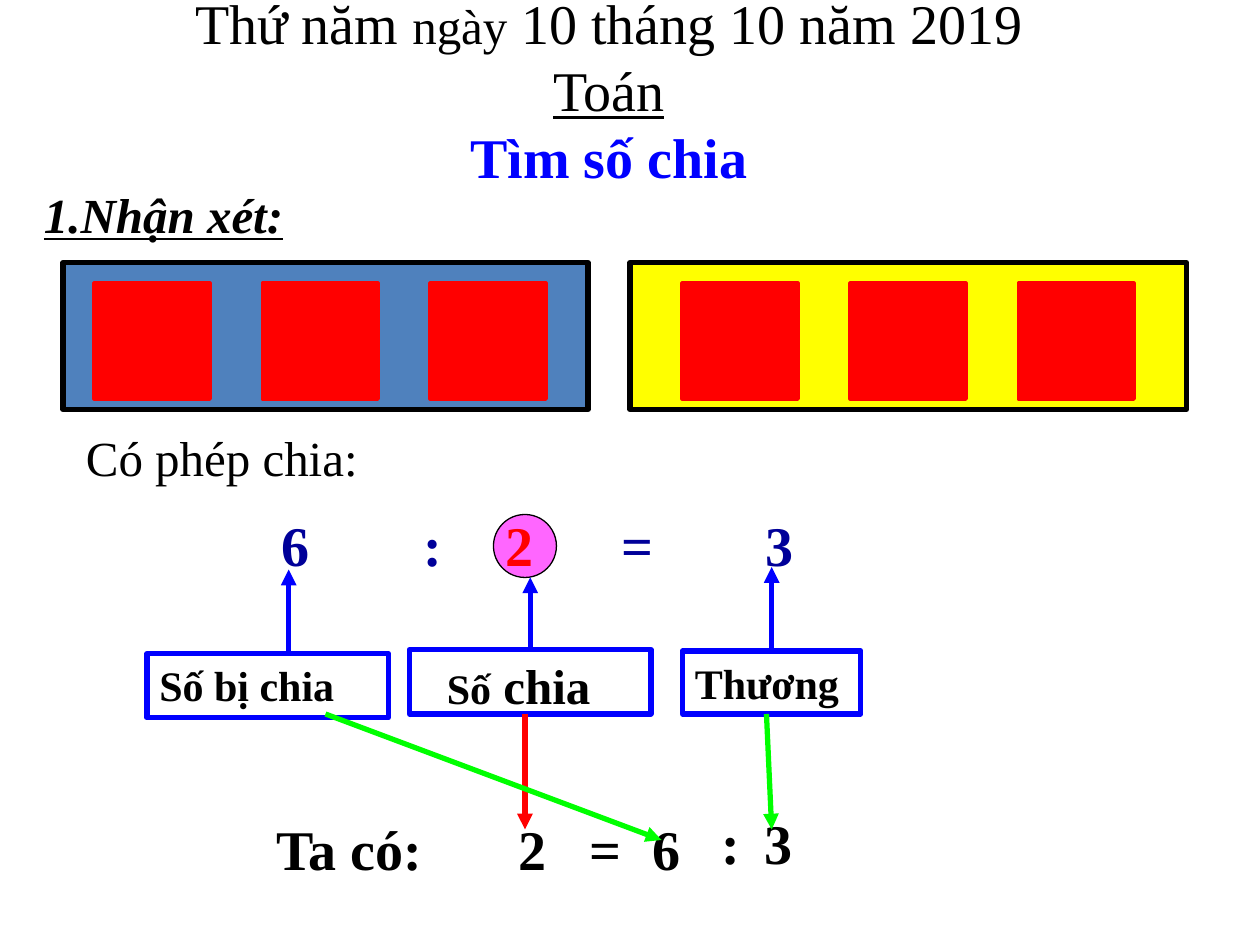
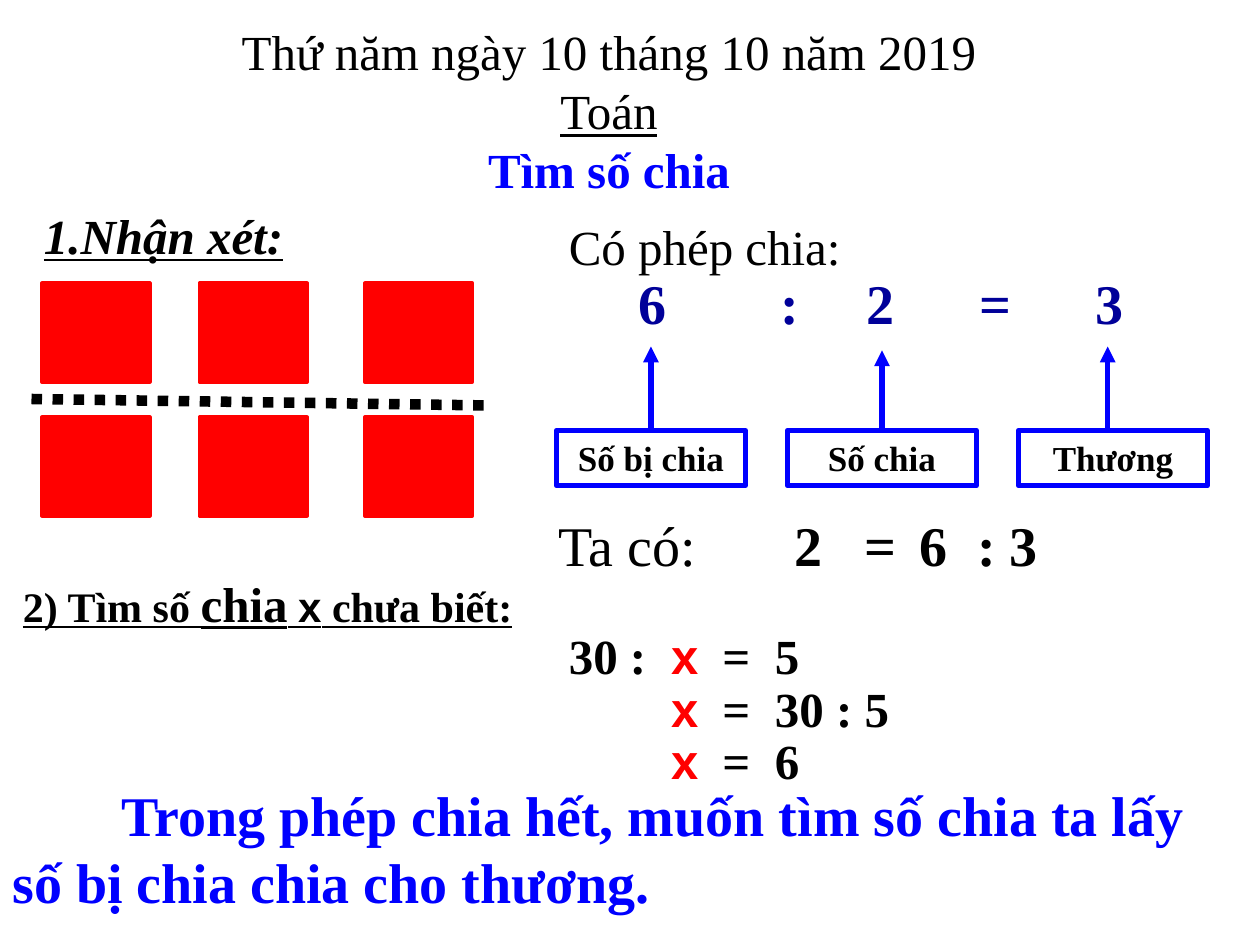
"""Build two lesson slides on finding the divisor."""
import lxml.etree
import pptx
import pptx.dml.color
import pptx.enum.dml
import pptx.enum.shapes
import pptx.enum.text
import pptx.oxml.ns
import pptx.util

PX = 9525
RGB = pptx.dml.color.RGBColor
BLACK, WHITE = RGB(0, 0, 0), RGB(255, 255, 255)
BLUE, NAVY, STEEL = RGB(0, 0, 255), RGB(0, 0, 0x99), RGB(0x4F, 0x81, 0xBD)
RED, LIME, YELLOW = RGB(255, 0, 0), RGB(0, 255, 0), RGB(255, 255, 0)
PINK = RGB(255, 0x66, 255)
SHAPE = pptx.enum.shapes.MSO_SHAPE
ALIGN = pptx.enum.text.PP_ALIGN
ANCHOR = pptx.enum.text.MSO_ANCHOR


def style(size, color=BLACK, name="Times New Roman", **more):
    return dict(size=pptx.util.Pt(size), color=color, name=name, **more)


def bold(size, color=BLACK, **more):
    return style(size, color, bold=True, **more)


HEAD = [("1.Nhận xét:", bold(28, italic=True, underline=True))]
CASE = [("Có phép chia:", style(28))]
UNDER = bold(24, underline=True)
EQUAL = bold(28)
VAR = bold(28, RED, name="Arial")


def title(size, date):
    return [date, [("Toán", style(size, underline=True))],
            [("Tìm số chia", bold(size, BLUE))]]


FIRST = {
    "title": ((32, 8, 864, 120), title(32, [
        ("Thứ năm ", style(32)), ("ngày", style(28)),
        (" 10 tháng 10 năm 2019", style(32))])),
    "shapes": [
        (SHAPE.OVAL, (376, 392, 48, 48), PINK, BLACK, 0.75),
        (SHAPE.RECTANGLE, (48, 200, 400, 112), STEEL, BLACK, 3),
        (SHAPE.RECTANGLE, (480, 200, 424, 112), YELLOW, BLACK, 3)],
    "cells": [(left + 128 * col, 216, 88, 88)
              for left in (72, 520) for col in range(3)],
    "labels": [
        ((112, 498, 184, 49), ALIGN.LEFT, [("Số bị chia", bold(24))], ()),
        ((520, 496, 136, 48), ALIGN.LEFT, [("Thương", bold(24))], ()),
        ((312, 495, 184, 49), ALIGN.LEFT,
         [("\tSố", bold(24)), (" chia", bold(28))], (19,))],
    "texts": [
        ((184, 384, 496, 61), [("\t6\t:\t=\t3", bold(32, NAVY))],
         (21, 129, 280, 390)),
        ((56, 321, 228, 55), CASE, ()),
        ((201, 616, 288, 61), [("Ta có:\t2\t=", bold(32))], (185, 239)),
        ((376, 384, 48, 60), [("2", bold(32, RED))], ()),
        ((24, 136, 400, 55), HEAD, ()),
        ((488, 616, 48, 61), [("6", bold(32))], ()),
        ((540, 611, 32, 61), [(":", bold(32))], ()),
        ((573, 611, 48, 61), [("3", bold(32))], ())],
    "lines": [
        ((220, 498, 220, 434), BLUE), ((588, 496, 588, 432), BLUE),
        ((404, 495, 404, 440), BLUE), ((400, 544, 400, 632), RED),
        ((584, 544, 588, 632), LIME), ((248, 544, 504, 640), LIME)],
    "dots": []}

SECOND = {
    "title": ((32, 24, 864, 120), title(28, [
        ("Thứ năm ngày 10 tháng 10 năm 2019", style(28))])),
    "shapes": [],
    "cells": [(left, top, 82, 75)
              for top in (216, 318) for left in (32, 152, 278)],
    "labels": [((left, 328, 144, 42), ALIGN.CENTER, [(word, bold(20))], ())
               for left, word in ((424, "Số bị chia"), (600, "Số chia"),
                                  (776, "Thương"))],
    "texts": [
        ((456, 200, 464, 61), [("\t6\t:\t2\t=\t3", bold(32, NAVY))],
         (21, 129, 195, 281, 369)),
        ((24, 152, 248, 55), HEAD, ()),
        ((424, 160, 227, 55), CASE, ()),
        ((416, 384, 401, 60),
         [("Ta có:", style(32)), ("\t2\t=\t6\t: 3", bold(32))],
         (180, 233, 275, 319)),
        ((8, 432, 464, 55),
         [("2) Tìm số ", UNDER), ("chia", bold(28, underline=True)),
          (" ", UNDER), ("x", {**UNDER, "name": "Arial"}),
          (" chưa biết:", UNDER)], ()),
        ((0, 590, 960, 113),
         [("\tTrong phép chia hết, muốn tìm số chia ta lấy "
           "số bị chia chia cho thương.", bold(32, BLUE))], (83,))] + [
        ((424, 472 + 40 * row, 280, 55),
         [(left + "\t", EQUAL), ("x", VAR), ("\t=\t" + right, EQUAL)],
         (78, 117, 157))
        for row, (left, right) in enumerate(
            (("30 :", "5"), ("", "30 : 5"), ("", "6")))],
    "lines": [((496, 328, 496, 264), BLUE), ((844, 328, 844, 264), BLUE),
              ((672, 328, 672, 267), BLUE)],
    "dots": [(24, 304, 376, 309)]}


def scale(box):
    return [n * PX for n in box]


def write(frame, paras, align=ALIGN.LEFT, tabs=(), anchor=ANCHOR.TOP):
    values = dict(word_wrap=True, vertical_anchor=anchor,
                  auto_size=pptx.enum.text.MSO_AUTO_SIZE.NONE)
    for key, value in values.items():
        setattr(frame, key, value)
    for num, runs in enumerate(paras):
        para = frame.add_paragraph() if num else frame.paragraphs[0]
        para.alignment = align
        if tabs:
            stops = lxml.etree.SubElement(para._p.get_or_add_pPr(),
                                          pptx.oxml.ns.qn("a:tabLst"))
            for stop in tabs:
                lxml.etree.SubElement(stops, pptx.oxml.ns.qn("a:tab"),
                                      pos=str(stop * PX), algn="l")
        for text, form in runs:
            run = para.add_run()
            run.text = text
            for key, value in form.items():
                if key == "color":
                    run.font.color.rgb = value
                else:
                    setattr(run.font, key, value)


def block(slide, kind, box, fill, color, width):
    shape = slide.shapes.add_shape(kind, *scale(box))
    shape.shadow.inherit = False
    if fill is None:
        shape.fill.background()
    else:
        shape.fill.solid()
        shape.fill.fore_color.rgb = fill
    shape.line.color.rgb = color
    shape.line.width = pptx.util.Pt(width)
    return shape


def line(slide, ends, color, width=3, arrow=True):
    link = slide.shapes.add_connector(
        pptx.enum.shapes.MSO_CONNECTOR.STRAIGHT, *scale(ends))
    link.line.color.rgb = color
    link.line.width = pptx.util.Pt(width)
    if arrow:
        lxml.etree.SubElement(link.line._get_or_add_ln(),
                              pptx.oxml.ns.qn("a:tailEnd"), type="triangle")
    else:
        link.line.dash_style = pptx.enum.dml.MSO_LINE.ROUND_DOT
    lxml.etree.SubElement(link._element.spPr, pptx.oxml.ns.qn("a:effectLst"))


def build(deck, page):
    slide = deck.slides.add_slide(deck.slide_layouts[5])
    slide.background.fill.solid()
    slide.background.fill.fore_color.rgb = WHITE
    box, paras = page["title"]
    head = slide.shapes.title
    for key, value in zip(("left", "top", "width", "height"), scale(box)):
        setattr(head, key, value)
    write(head.text_frame, paras, ALIGN.CENTER, anchor=ANCHOR.MIDDLE)
    for part in page["shapes"]:
        block(slide, *part)
    for box in page["cells"]:
        block(slide, SHAPE.RECTANGLE, box, RED, RED, 2.25)
    for box, align, runs, tabs in page["labels"]:
        label = block(slide, SHAPE.RECTANGLE, box, None, BLUE, 3)
        write(label.text_frame, [runs], align, tabs)
    for box, runs, tabs in page["texts"]:
        text = slide.shapes.add_textbox(*scale(box))
        write(text.text_frame, [runs], tabs=tabs)
    for ends, color in page["lines"]:
        line(slide, ends, color)
    for ends in page["dots"]:
        line(slide, ends, BLACK, 6, False)


def main():
    deck = pptx.Presentation()
    deck.slide_width, deck.slide_height = scale((960, 720))
    for page in (FIRST, SECOND):
        build(deck, page)
    deck.save("out.pptx")


if __name__ == "__main__":
    main()
